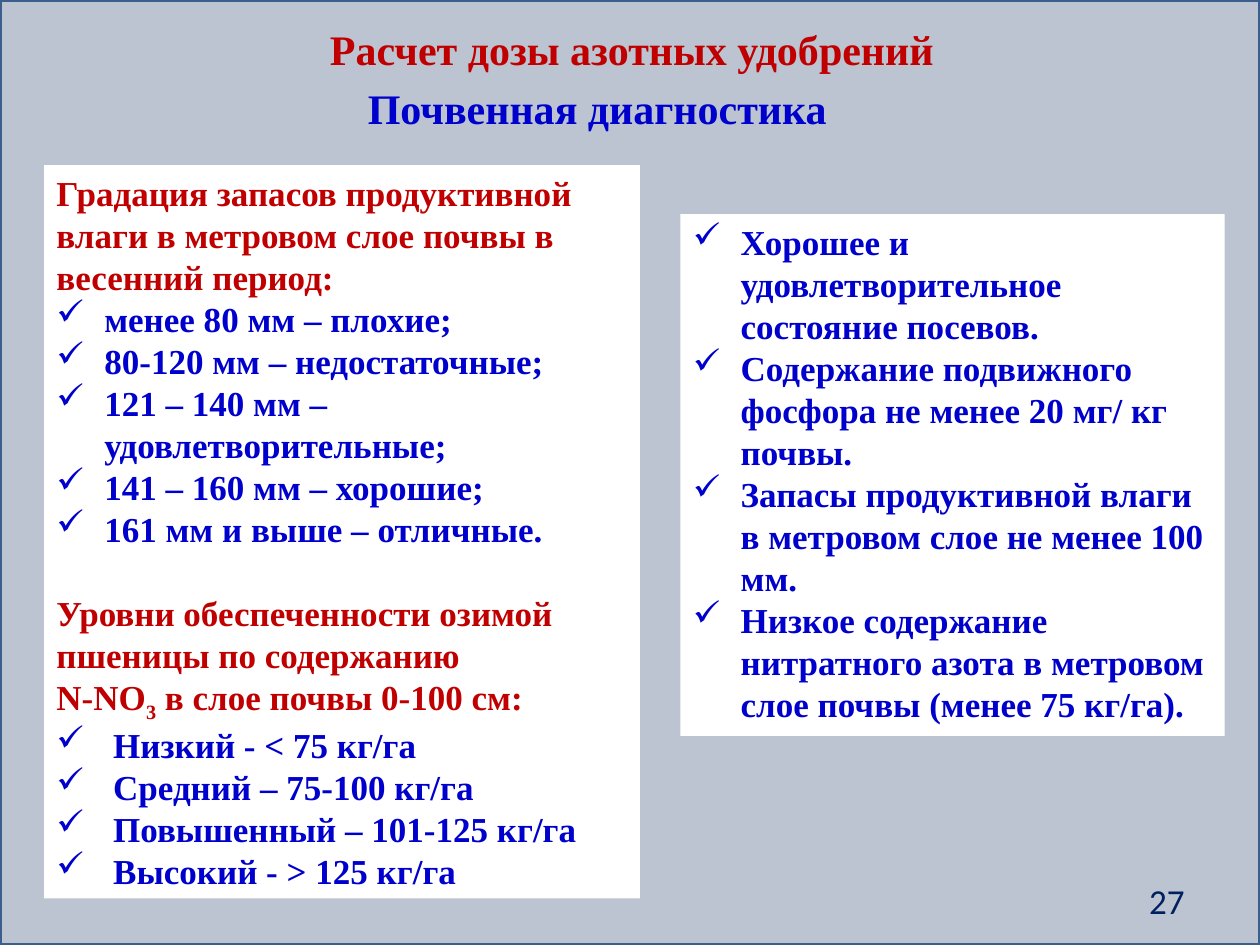
from lxml import etree
from pptx import Presentation
from pptx.dml.color import RGBColor
from pptx.enum import shapes, text
from pptx.oxml import ns
from pptx.util import Inches, Pt

NAVY = RGBColor(0x17, 0x37, 0x5E)
FRAME = RGBColor(0x3A, 0x5F, 0x8C)
RED = RGBColor(0xC0, 0x00, 0x00)
BLUE = RGBColor(0x00, 0x00, 0xCC)
DARK_BLUE = RGBColor(0x00, 0x20, 0x60)
WHITE = RGBColor(0xFF, 0xFF, 0xFF)

MOISTURE_GRADES = [
    "менее 80 мм – плохие;",
    "80-120 мм – недостаточные;",
    "121 – 140 мм – удовлетворительные;",
    "141 – 160 мм – хорошие;",
    "161 мм и выше – отличные.",
]
NITRATE_LEVELS = [
    "Низкий - < 75 кг/га",
    "Средний – 75-100 кг/га",
    "Повышенный – 101-125 кг/га",
    "Высокий - > 125 кг/га",
]
CONDITIONS = [
    "Хорошее и удовлетворительное состояние посевов.",
    "Содержание подвижного фосфора не менее 20 мг/ кг почвы.",
    "Запасы продуктивной влаги в метровом слое не менее 100 мм.",
    "Низкое содержание нитратного азота в метровом слое почвы (менее 75 кг/га).",
]


class SlideBuilder:
    font_name = "Times New Roman"
    body_size = 20
    title_size = 24
    hanging = 0.38

    def __init__(self, slide):
        self.slide = slide

    def background(self, width, height):
        shape = self.slide.shapes.add_shape(
            shapes.MSO_SHAPE.FLOWCHART_PROCESS, 0, 0, width, height)
        shape.shadow.inherit = False
        shape.fill.solid()
        shape.fill.fore_color.rgb = NAVY
        color = shape.fill._xPr.find(".//" + ns.qn("a:srgbClr"))
        etree.SubElement(color, ns.qn("a:alpha"), val="29000")
        shape.line.color.rgb = FRAME
        shape.line.width = Pt(2)

    def run(self, paragraph, content, color, size=None, bold=True,
            font_name=None, subscript=False):
        run = paragraph.add_run()
        run.text = content
        run.font.name = font_name or self.font_name
        run.font.size = Pt(size or self.body_size)
        run.font.bold = bold
        run.font.color.rgb = color
        if subscript:
            run.font._element.set("baseline", "-25000")

    def label(self, box, content, color, align, **style):
        shape = self.slide.shapes.add_textbox(*map(Inches, box))
        frame = shape.text_frame
        frame.word_wrap = True
        frame.vertical_anchor = text.MSO_ANCHOR.MIDDLE
        paragraph = frame.paragraphs[0]
        paragraph.alignment = align
        self.run(paragraph, content, color, **style)

    def panel(self, box):
        shape = self.slide.shapes.add_shape(
            shapes.MSO_SHAPE.RECTANGLE, *map(Inches, box))
        shape.shadow.inherit = False
        shape.fill.solid()
        shape.fill.fore_color.rgb = WHITE
        shape.line.fill.background()
        frame = shape.text_frame
        frame.word_wrap = True
        frame.vertical_anchor = text.MSO_ANCHOR.TOP
        return frame

    def paragraph(self, frame):
        first = frame.paragraphs[0]
        paragraph = frame.add_paragraph() if first.runs else first
        paragraph.alignment = text.PP_ALIGN.LEFT
        return paragraph

    def heading(self, frame, content, space_before=0):
        paragraph = self.paragraph(frame)
        paragraph.space_before = Pt(space_before)
        self.run(paragraph, content, RED)
        return paragraph

    def check_list(self, frame, items, indent=hanging):
        for item in items:
            paragraph = self.paragraph(frame)
            properties = paragraph._p.get_or_add_pPr()
            properties.set("marL", str(Inches(indent)))
            properties.set("indent", str(-Inches(indent)))
            etree.SubElement(properties, ns.qn("a:buChar"), char="✓")
            self.run(paragraph, item, BLUE)


def main():
    presentation = Presentation()
    presentation.slide_width = Inches(10)
    presentation.slide_height = Inches(7.5)
    builder = SlideBuilder(
        presentation.slides.add_slide(presentation.slide_layouts[6]))

    # Background and page number
    builder.background(presentation.slide_width, presentation.slide_height)
    builder.label((7.17, 6.95, 2.33, 0.4), "27", DARK_BLUE,
                  text.PP_ALIGN.RIGHT, bold=False, font_name="Calibri")

    # Titles
    builder.label((0.03, 0.14, 9.97, 0.5), "Расчет дозы азотных удобрений",
                  RED, text.PP_ALIGN.CENTER, size=builder.title_size)
    builder.label((1.53, 0.6, 6.42, 0.51), "Почвенная диагностика",
                  BLUE, text.PP_ALIGN.CENTER, size=builder.title_size)

    # Left panel: moisture grades and nitrate levels
    grades = builder.panel((0.35, 1.31, 4.73, 5.82))
    builder.heading(grades, "Градация запасов продуктивной влаги "
                            "в метровом слое почвы в весенний период:")
    builder.check_list(grades, MOISTURE_GRADES)
    builder.heading(grades, "Уровни обеспеченности озимой пшеницы "
                            "по содержанию", space_before=24)
    formula = builder.heading(grades, "N-NO")
    builder.run(formula, "3", RED, subscript=True)
    builder.run(formula, " в слое почвы 0-100 см:", RED)
    builder.check_list(grades, NITRATE_LEVELS, indent=0.45)

    # Right panel: conditions
    conditions = builder.panel((5.4, 1.7, 4.32, 4.14))
    builder.check_list(conditions, CONDITIONS)

    presentation.save("out.pptx")


if __name__ == "__main__":
    main()
